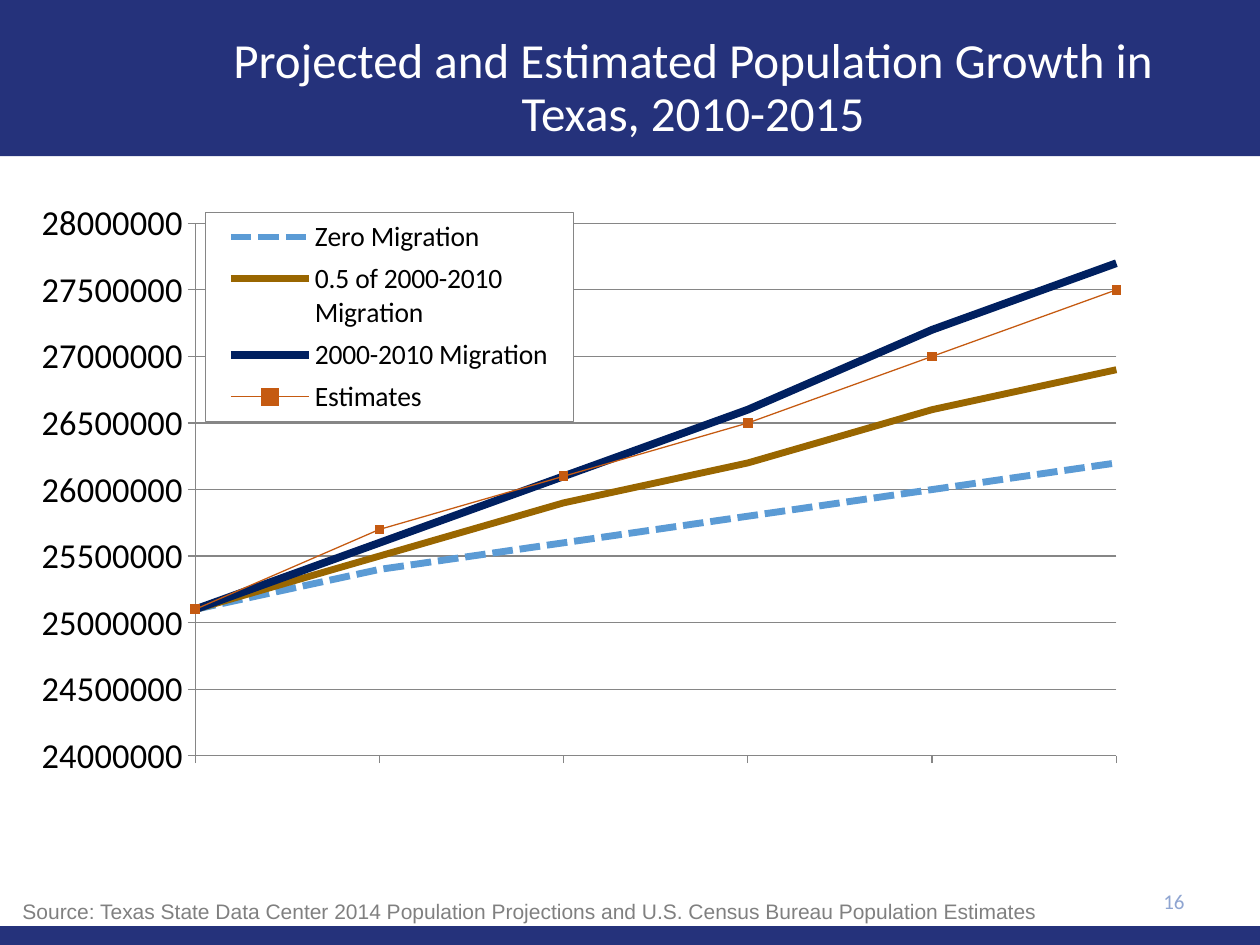
from dataclasses import dataclass

from lxml import etree
from pptx import Presentation
from pptx import util as u
from pptx.chart.data import CategoryChartData
from pptx.dml.color import RGBColor
from pptx.enum import chart as charts, dml, shapes, text
from pptx.oxml import parse_xml
from pptx.oxml.ns import nsdecls, qn


@dataclass(frozen=True)
class Theme:
    """Colours, fonts and type sizes of the slide."""
    band: str = "25327B"
    title: str = "FFFFFF"
    ink: str = "000000"
    rule: str = "868686"
    number: str = "8FA5D1"
    source: str = "808080"
    marker: str = "ED7D31"
    font: str = "Calibri"
    source_font: str = "Arial"
    title_size: int = 28
    axis_size: int = 20
    legend_size: int = 16
    small_size: int = 12


THEME = Theme()
YEARS = ["2010", "2011", "2012", "2013", "2014", "2015"]
SERIES = [
    ("Zero Migration", [25.1, 25.4, 25.6, 25.8, 26.0, 26.2], "5B9BD5", 4),
    ("0.5 of 2000-2010 Migration", [25.1, 25.5, 25.9, 26.2, 26.6, 26.9], "996600", 4),
    ("2000-2010 Migration", [25.1, 25.6, 26.1, 26.6, 27.2, 27.7], "002060", 4.5),
    ("Estimates", [25.1, 25.7, 26.1, 26.5, 27.0, 27.5], "C55A11", 0.75),
]


def style_font(font, size, color, name=THEME.font):
    """Set the size, colour and typeface of a font."""
    font.size, font.name = u.Pt(size), name
    font.color.rgb = RGBColor.from_string(color)


def style_line(line, color, width=0.75):
    """Give a line a solid colour and a width."""
    line.color.rgb = RGBColor.from_string(color)
    line.width = u.Pt(width)


def add_band(slide, top, height):
    """Add a full-width coloured band."""
    band = slide.shapes.add_shape(
        shapes.MSO_SHAPE.RECTANGLE, 0, u.Inches(top), u.Inches(10), u.Inches(height))
    band.shadow.inherit = False
    band.fill.solid()
    band.fill.fore_color.rgb = RGBColor.from_string(THEME.band)
    band.line.fill.background()


def set_title(slide, wording):
    """Place the title placeholder over the top band."""
    title = slide.shapes.title
    slide.shapes._spTree.append(title._element)
    title.left, title.top = u.Inches(1.75), u.Inches(0.17)
    title.width, title.height = u.Inches(7.5), u.Inches(1.08)
    frame = title.text_frame
    frame.text = wording
    frame.auto_size = text.MSO_AUTO_SIZE.NONE
    frame.vertical_anchor = text.MSO_ANCHOR.MIDDLE
    paragraph = frame.paragraphs[0]
    paragraph.alignment = text.PP_ALIGN.CENTER
    paragraph.line_spacing = 0.9
    style_font(paragraph.font, THEME.title_size, THEME.title)


def add_label(slide, wording, box, color, font, alignment, anchor):
    """Add a small one-line text box."""
    frame = slide.shapes.add_textbox(*map(u.Inches, box)).text_frame
    frame.word_wrap = True
    frame.vertical_anchor = anchor
    paragraph = frame.paragraphs[0]
    paragraph.text = wording
    paragraph.alignment = alignment
    style_font(paragraph.font, THEME.small_size, color, font)


def set_layout(parent, index, box, inner=False):
    """Place a chart part at fractions of the chart area."""
    for old in parent.findall(qn("c:layout")):
        parent.remove(old)
    layout = etree.Element(qn("c:layout"))
    manual = etree.SubElement(layout, qn("c:manualLayout"))
    settings = [("layoutTarget", "inner")] if inner else []
    settings += [("xMode", "edge"), ("yMode", "edge")]
    settings += zip("xywh", box)
    for tag, value in settings:
        etree.SubElement(manual, qn(f"c:{tag}")).set("val", str(value))
    parent.insert(index, layout)


def style_axes(chart):
    """Format both axes and start the lines on the value axis."""
    years, values = chart.category_axis, chart.value_axis
    years.tick_label_position = charts.XL_TICK_LABEL_POSITION.NONE
    values.minimum_scale, values.maximum_scale = 24_000_000, 28_000_000
    values.major_unit = 500_000
    values.has_major_gridlines = True
    values.tick_labels.number_format = "0"
    values.tick_labels.number_format_is_linked = False
    style_line(values.major_gridlines.format.line, THEME.rule)
    for axis in (years, values):
        axis.major_tick_mark = charts.XL_TICK_MARK.OUTSIDE
        axis.minor_tick_mark = charts.XL_TICK_MARK.NONE
        style_line(axis.format.line, THEME.rule)
    element = values._element
    for old in element.findall(qn("c:crossBetween")):
        element.remove(old)
    crossing = etree.Element(qn("c:crossBetween"))
    crossing.set("val", "midCat")
    element.find(qn("c:crosses")).addnext(crossing)


def style_legend(chart):
    """Lay a boxed legend over the upper left of the plot."""
    chart.has_legend = True
    legend = chart.legend
    legend.position = charts.XL_LEGEND_POSITION.LEFT
    legend.include_in_layout = False
    style_font(legend.font, THEME.legend_size, THEME.ink)
    element = legend._element
    set_layout(element, 1, (0.13, 0.02, 0.33, 0.32))
    element.find(qn("c:txPr")).addprevious(parse_xml(
        f'<c:spPr {nsdecls("c", "a")}>'
        f'<a:solidFill><a:srgbClr val="{THEME.title}"/></a:solidFill>'
        f'<a:ln w="9525"><a:solidFill><a:srgbClr val="{THEME.rule}"/></a:solidFill></a:ln>'
        '</c:spPr>'))


def style_series(chart):
    """Colour the lines, dash the first and mark the last."""
    plotted = list(chart.plots[0].series)
    for series, (_, _, color, width) in zip(plotted, SERIES):
        series.smooth = False
        style_line(series.format.line, color, width)
        series.marker.style = charts.XL_MARKER_STYLE.NONE
    plotted[0].format.line.dash_style = dml.MSO_LINE.SQUARE_DOT
    marker = plotted[-1].marker
    marker.style, marker.size = charts.XL_MARKER_STYLE.SQUARE, 5
    marker.format.fill.solid()
    marker.format.fill.fore_color.rgb = RGBColor.from_string(THEME.marker)
    style_line(marker.format.line, SERIES[-1][2])


def add_population_chart(slide):
    """Add the line chart of projections and estimates."""
    data = CategoryChartData(number_format="0")
    data.categories = YEARS
    for name, millions, _, _ in SERIES:
        data.add_series(name, [round(value * 1_000_000) for value in millions])
    chart = slide.shapes.add_chart(
        charts.XL_CHART_TYPE.LINE, u.Inches(0.33), u.Inches(1.58),
        u.Inches(9), u.Inches(5.2), data).chart
    chart.has_title = False
    chart.plots[0].vary_by_categories = False
    style_font(chart.font, THEME.axis_size, THEME.ink)
    style_axes(chart)
    style_legend(chart)
    style_series(chart)
    plot_area = chart._chartSpace.chart.plotArea
    set_layout(plot_area, 0, (0.121, 0.037, 0.826, 0.813), inner=True)


def main():
    """Build and save the slide."""
    presentation = Presentation()
    presentation.slide_width, presentation.slide_height = u.Inches(10), u.Inches(7.5)
    slide = presentation.slides.add_slide(presentation.slide_layouts[5])
    add_band(slide, 0, 1.24)
    add_band(slide, 7.35, 0.15)
    add_population_chart(slide)
    set_title(slide, "Projected and Estimated Population Growth in Texas, 2010-2015")
    add_label(slide, "16", (7.17, 6.95, 2.33, 0.4), THEME.number, THEME.font,
              text.PP_ALIGN.RIGHT, text.MSO_ANCHOR.MIDDLE)
    add_label(slide, "Source: Texas State Data Center 2014 Population Projections "
              "and U.S. Census Bureau Population Estimates", (0.08, 7.08, 9.58, 0.3),
              THEME.source, THEME.source_font, text.PP_ALIGN.LEFT, text.MSO_ANCHOR.TOP)
    presentation.save("out.pptx")


if __name__ == "__main__":
    main()
